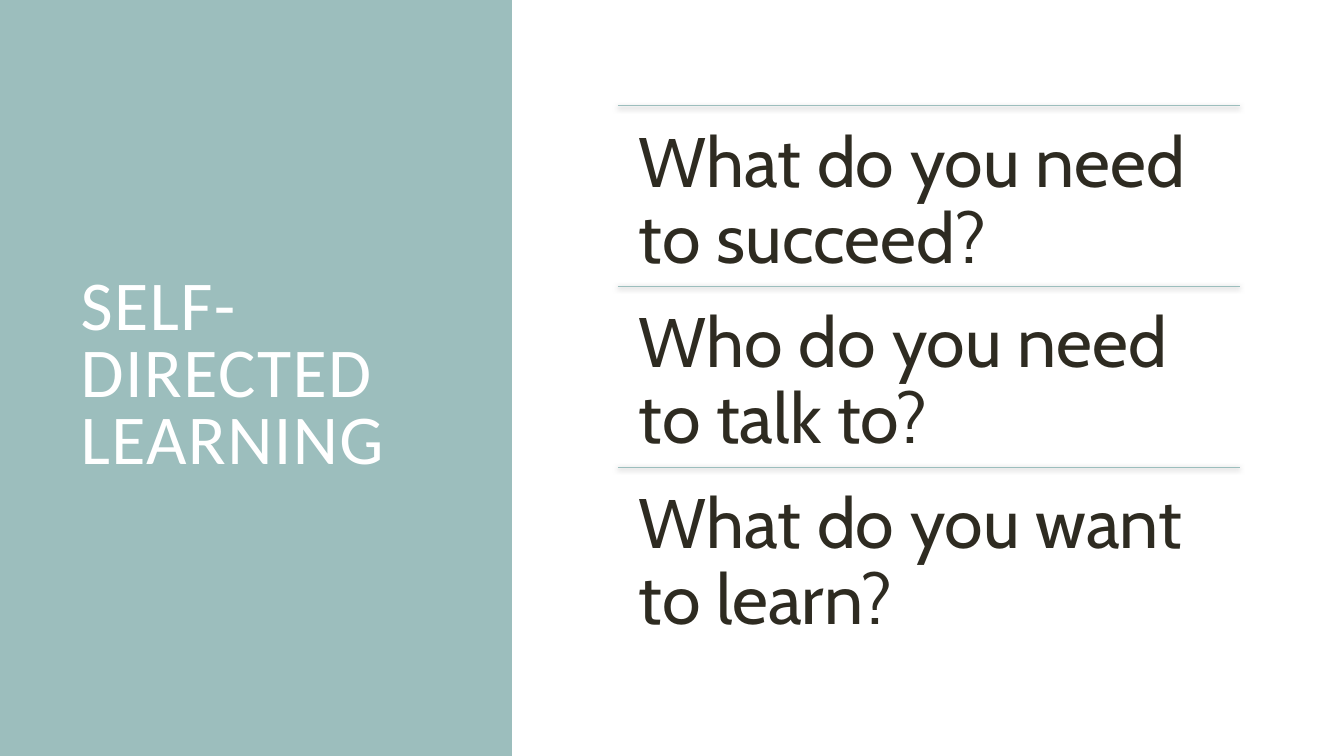
"""Build the self-directed learning slide."""
import pptx
import pptx.dml.color
import pptx.enum.shapes
import pptx.enum.text
import pptx.oxml
import pptx.oxml.ns
import pptx.util

Cm = pptx.util.Cm
Pt = pptx.util.Pt
COLORS = {"panel": "9CBEBD", "rule": "9CBEBD", "title": "FFFFFF", "text": "2E2B21"}
ASKS = [
    "What do you need to succeed?",
    "Who do you need to talk to?",
    "What do you want to learn?",
]
LEFT, TOP, WIDTH, STEP = 15.57, 2.67, 15.67, 4.55
SHADOW = (
    f'<a:effectLst {pptx.oxml.ns.nsdecls("a")}>'
    '<a:outerShdw blurRad="50800" dist="12700" dir="5400000" rotWithShape="0">'
    '<a:srgbClr val="000000"><a:alpha val="50000"/></a:srgbClr>'
    '</a:outerShdw></a:effectLst>'
)


def color(name):
    return pptx.dml.color.RGBColor.from_string(COLORS[name])


def write(shape, text, font, tint, size=50, lead=0.9, inset=0.25, anchor="TOP", track=0):
    frame = shape.text_frame
    frame.word_wrap = True
    frame.auto_size = pptx.enum.text.MSO_AUTO_SIZE.NONE
    frame.vertical_anchor = getattr(pptx.enum.text.MSO_ANCHOR, anchor)
    frame.margin_left = frame.margin_right = Cm(inset)
    frame.margin_top = frame.margin_bottom = Cm(inset)
    para = frame.paragraphs[0]
    para.alignment = pptx.enum.text.PP_ALIGN.LEFT
    para.line_spacing = lead
    run = para.add_run()
    run.text = text
    run.font.name = font
    run.font.size = Pt(size)
    run.font.color.rgb = color(tint)
    if track:
        run.font._element.set("spc", str(track * 100))


def panel(slide):
    shape = slide.shapes.add_shape(
        pptx.enum.shapes.MSO_SHAPE.RECTANGLE, 0, 0, Cm(12.9), Cm(19.05))
    shape.shadow.inherit = False
    shape.fill.solid()
    shape.fill.fore_color.rgb = color("panel")
    shape.line.fill.background()
    slide.shapes._spTree.insert(2, shape._element)


def title(slide, text):
    shape = slide.shapes.title
    shape.left, shape.top = Cm(1.78), Cm(1.78)
    shape.width, shape.height = Cm(9.47), Cm(15.47)
    write(shape, text, "Calibri", "title", lead=0.8, anchor="MIDDLE", track=1)


def rule(slide, top):
    line = slide.shapes.add_connector(
        pptx.enum.shapes.MSO_CONNECTOR.STRAIGHT,
        Cm(LEFT), Cm(top), Cm(LEFT + WIDTH), Cm(top))
    line.line.color.rgb = color("rule")
    line.line.width = Pt(0.75)
    line._element.spPr.append(pptx.oxml.parse_xml(SHADOW))


def ask(slide, text, top):
    rule(slide, top)
    box = slide.shapes.add_textbox(Cm(LEFT), Cm(top), Cm(WIDTH), Cm(STEP))
    write(box, text, "Cabin", "text", inset=0.53)


def main():
    deck = pptx.Presentation()
    deck.slide_width, deck.slide_height = Cm(33.87), Cm(19.05)
    slide = deck.slides.add_slide(deck.slide_layouts.get_by_name("Title Only"))
    panel(slide)
    title(slide, "SELF-DIRECTED LEARNING")
    for row, text in enumerate(ASKS):
        ask(slide, text, TOP + row * STEP)
    deck.save("out.pptx")


if __name__ == "__main__":
    main()
